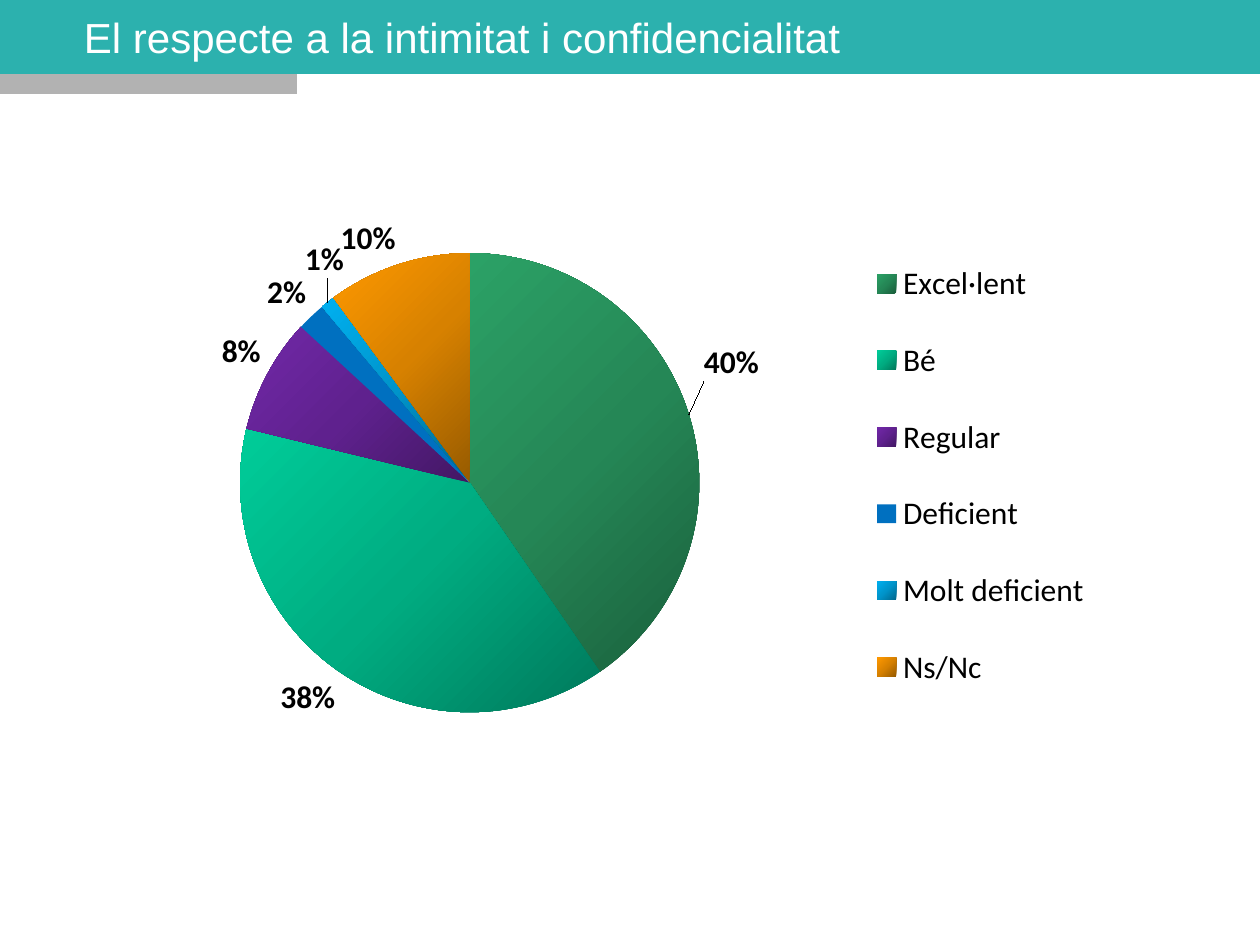
from dataclasses import dataclass

from lxml import etree
from pptx import Presentation
from pptx.chart.data import CategoryChartData
from pptx.dml.color import RGBColor
from pptx.enum.chart import XL_CHART_TYPE, XL_LABEL_POSITION, XL_LEGEND_POSITION
from pptx.enum.shapes import MSO_SHAPE
from pptx.enum.text import MSO_ANCHOR, PP_ALIGN
from pptx.oxml import parse_xml
from pptx.oxml.ns import nsdecls, qn
from pptx.util import Pt

PIE = XL_CHART_TYPE.PIE
OUTSIDE_END = XL_LABEL_POSITION.OUTSIDE_END
RIGHT = XL_LEGEND_POSITION.RIGHT
RECTANGLE = MSO_SHAPE.RECTANGLE
MIDDLE = MSO_ANCHOR.MIDDLE
LEFT = PP_ALIGN.LEFT
TITLE_ONLY = 5


@dataclass(frozen=True)
class Theme:
    band: str = "2CB1AE"
    tab: str = "B2B2B2"
    title: str = "FFFFFF"
    text: str = "000000"
    title_font: str = "Arial"
    chart_font: str = "Calibri"
    title_size: int = 24
    chart_size: int = 18


THEME = Theme()
EMU_PER_PX = 914400 // 126
SLIDE_SIZE = (1260, 945)

TITLE = "El respecte a la intimitat i confidencialitat"
TITLE_BOX = (84, 0, 1155, 74)
BARS = [
    ((0, 74, 297, 20), THEME.tab),
    ((0, 0, 1260, 74), THEME.band),
]
CHART_BOX = (45, 96, 1148, 723)
PLOT_LAYOUT = {"x": 0.17, "y": 0.19, "w": 0.4, "h": 0.69}
LEGEND_LAYOUT = {"x": 0.71, "y": 0.18, "w": 0.21, "h": 0.69}
# category, percentage, colours from dark to light, label shift in px
ANSWERS = [
    ("Excel·lent", 40, ("1A5F3C", "258756", "2BA166"), (8, -31)),
    ("Bé", 38, ("00795B", "00AC81", "00CC99"), None),
    ("Regular", 8, ("431764", "5F218E", "7128A8"), None),
    ("Deficient", 2, ("0070C0",), None),
    ("Molt deficient", 1, ("00688E", "0094CA", "00B0F0"), (21, -18)),
    ("Ns/Nc", 10, ("975B00", "D78100", "FF9900"), None),
]


def px(*lengths):
    return [length * EMU_PER_PX for length in lengths]


def set_font(font, name, size, color):
    font.name = name
    font.size = Pt(size)
    font.color.rgb = RGBColor.from_string(color)


def layout_element(values, inner=False):
    """Manual chart layout; x and y count from the chart's edge if a size is given."""
    layout = parse_xml(f"<c:layout {nsdecls('c')}><c:manualLayout/></c:layout>")
    entries = [("layoutTarget", "inner")] if inner else []
    if "w" in values:
        entries += [("xMode", "edge"), ("yMode", "edge")]
    for tag, value in entries + list(values.items()):
        etree.SubElement(layout[0], qn(f"c:{tag}")).set("val", str(value))
    return layout


def fill_slice(point, colors):
    if len(colors) == 1:
        point.format.fill.solid()
        point.format.fill.fore_color.rgb = RGBColor.from_string(colors[0])
        return
    stops = "".join(
        f'<a:gs pos="{index * 50000}"><a:srgbClr val="{color}"/></a:gs>'
        for index, color in enumerate(colors)
    )
    properties = point._element.find(qn("c:spPr")) if hasattr(point, "_element") else None
    if properties is None:
        point.format.fill.gradient()
        properties = point.format.fill._xPr
    old_fill = properties.find(qn("a:gradFill"))
    properties.replace(old_fill, parse_xml(
        f'<a:gradFill {nsdecls("a")} rotWithShape="1"><a:gsLst>{stops}</a:gsLst>'
        '<a:lin ang="13500000" scaled="1"/></a:gradFill>'
    ))


def shift_label(labels_element, index, shift):
    x, y = (round(move / side, 3) for move, side in zip(shift, CHART_BOX[2:]))
    label = parse_xml(
        f'<c:dLbl {nsdecls("c")}><c:idx val="{index}"/><c:dLblPos val="outEnd"/>'
        '<c:showLegendKey val="0"/><c:showVal val="0"/><c:showCatName val="0"/>'
        '<c:showSerName val="0"/><c:showPercent val="1"/><c:showBubbleSize val="0"/></c:dLbl>'
    )
    label.insert(1, layout_element({"x": x, "y": y}))
    position = len(labels_element.findall(qn("c:dLbl")))
    labels_element.insert(position, label)


def add_bars(slide):
    """Place the header bars behind the title."""
    for box, color in BARS:
        bar = slide.shapes.add_shape(RECTANGLE, *px(*box))
        bar.shadow.inherit = False
        bar.fill.solid()
        bar.fill.fore_color.rgb = RGBColor.from_string(color)
        bar.line.fill.background()
        slide.shapes.title.element.addprevious(bar.element)


def add_title(slide):
    title = slide.shapes.title
    title.left, title.top, title.width, title.height = px(*TITLE_BOX)
    frame = title.text_frame
    frame.margin_left = frame.margin_right = frame.margin_top = frame.margin_bottom = 0
    frame.vertical_anchor = MIDDLE
    paragraph = frame.paragraphs[0]
    paragraph.alignment = LEFT
    run = paragraph.add_run()
    run.text = TITLE
    set_font(run.font, THEME.title_font, THEME.title_size, THEME.title)


def add_pie(slide):
    data = CategoryChartData()
    data.categories = [answer[0] for answer in ANSWERS]
    data.add_series("Series 1", [answer[1] for answer in ANSWERS])
    chart = slide.shapes.add_chart(PIE, *px(*CHART_BOX), data).chart
    chart.has_title = False
    set_font(chart.font, THEME.chart_font, THEME.chart_size, THEME.text)

    chart.has_legend = True
    legend = chart.legend
    legend.position = RIGHT
    legend.include_in_layout = False
    set_font(legend.font, THEME.chart_font, THEME.chart_size, THEME.text)
    for part, layout in (
        (chart.element.find(".//" + qn("c:plotArea")), layout_element(PLOT_LAYOUT, inner=True)),
        (chart.element.find(".//" + qn("c:legend")), layout_element(LEGEND_LAYOUT)),
    ):
        for old_layout in part.findall(qn("c:layout")):
            part.remove(old_layout)
        part.insert(1 if part.tag == qn("c:legend") else 0, layout)

    chart.plots[0].vary_by_categories = True
    series = chart.plots[0].series[0]
    labels = series.data_labels
    labels.show_value = False
    labels.show_percentage = True
    labels.number_format = "0%"
    labels.number_format_is_linked = False
    labels.position = OUTSIDE_END
    set_font(labels.font, THEME.chart_font, THEME.chart_size, THEME.text)
    labels.font.bold = True
    labels_element = series.data_labels._element
    for index, (_, _, colors, shift) in enumerate(ANSWERS):
        fill_slice(series.points[index], colors)
        if shift:
            shift_label(labels_element, index, shift)


def main():
    presentation = Presentation()
    presentation.slide_width, presentation.slide_height = px(*SLIDE_SIZE)
    slide = presentation.slides.add_slide(presentation.slide_layouts[TITLE_ONLY])
    add_bars(slide)
    add_title(slide)
    add_pie(slide)
    presentation.save("out.pptx")


if __name__ == "__main__":
    main()
